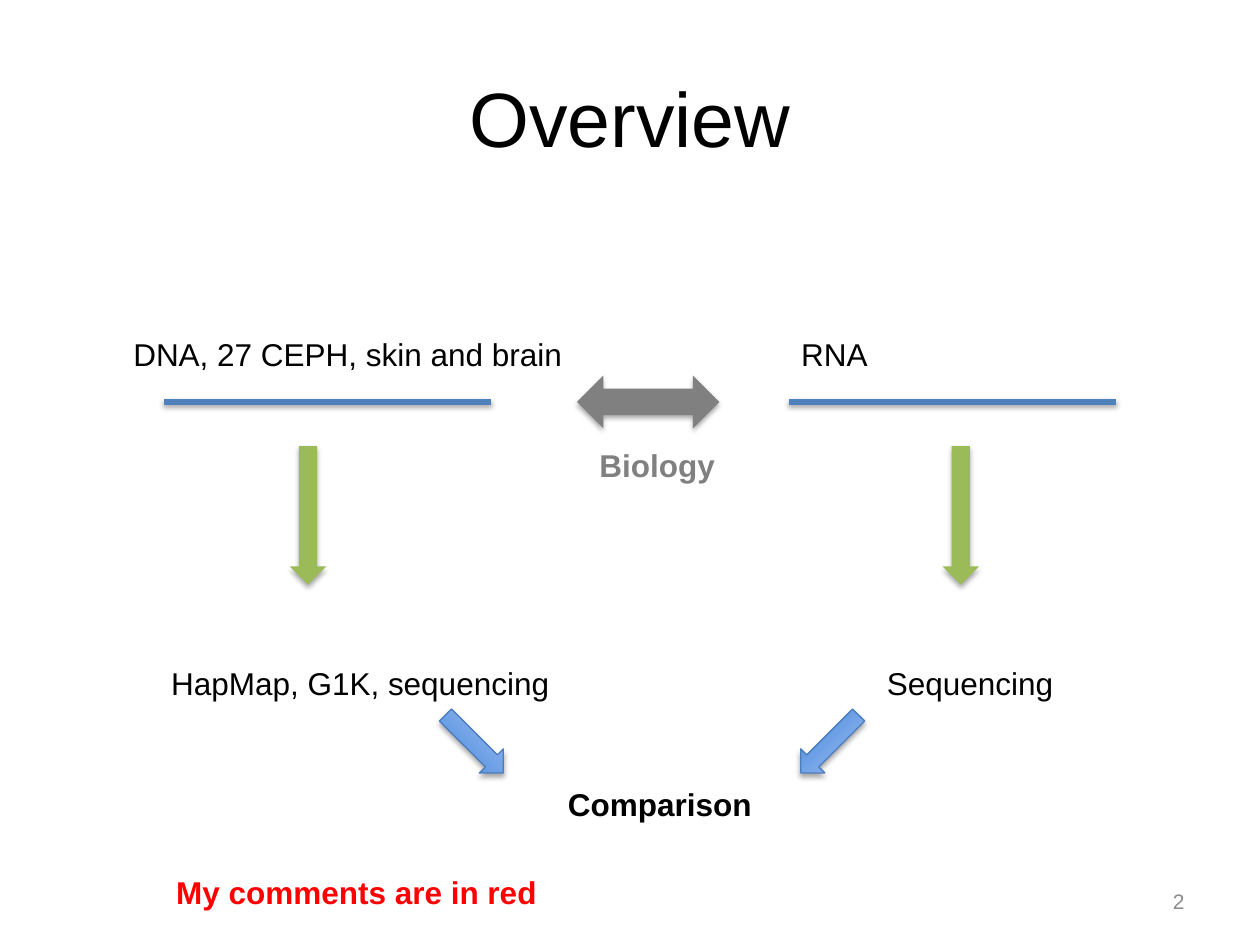
from lxml import etree
from pptx import Presentation
from pptx.dml.color import RGBColor
from pptx.enum.shapes import MSO_CONNECTOR, MSO_SHAPE
from pptx.enum.text import MSO_ANCHOR, MSO_AUTO_SIZE, PP_ALIGN
from pptx.oxml.ns import qn
from pptx.util import Inches, Pt

STRAIGHT = MSO_CONNECTOR.STRAIGHT
DOUBLE, DOWN, RIGHT_ARROW = (MSO_SHAPE.LEFT_RIGHT_ARROW, MSO_SHAPE.DOWN_ARROW,
                             MSO_SHAPE.RIGHT_ARROW)
LEFT, CENTER, RIGHT = PP_ALIGN.LEFT, PP_ALIGN.CENTER, PP_ALIGN.RIGHT
TOP, MIDDLE = MSO_ANCHOR.TOP, MSO_ANCHOR.MIDDLE

THEME = {
    "font": "Arial", "title": 44, "body": 18, "small": 12,
    "black": "000000", "gray": "808080", "number": "8C8C8C", "red": "FF0000",
    "strand": "4F81BD", "green": "9BBB59", "outline": "4B7EBC",
    "gradient": ("3F80CE", "A4C4FF"),
}

# Content: text, (left, top, width, height), format
TITLE = ("Overview", (0.5, 0.3, 9, 1.25),
         dict(size="title", align=CENTER, anchor=MIDDLE, wrap=True))
PAGE_NUMBER = ("2", (7.17, 6.95, 2.33, 0.4),
               dict(size="small", color="number", align=RIGHT, anchor=MIDDLE, wrap=True))
LABELS = [
    ("DNA, 27 CEPH, skin and brain", (0.96, 2.61, 3.64, 0.4), {}),
    ("RNA", (6.26, 2.61, 0.75, 0.4), {}),
    ("HapMap, G1K, sequencing", (1.26, 5.22, 3.23, 0.4), {}),
    ("Sequencing", (6.94, 5.22, 1.54, 0.4), {}),
    ("Biology", (4.66, 3.49, 1.14, 0.4), dict(color="gray", bold=True)),
    ("Comparison", (4.41, 6.18, 1.67, 0.4), dict(bold=True)),
    ("My comments are in red", (1.3, 6.88, 3.09, 0.4), dict(color="red", bold=True)),
]
STRAND_LEFTS, STRAND_TOP, STRAND_LENGTH = (1.3, 6.26), 3.19, 2.6
DOWN_LEFTS = (2.3, 7.48)
MERGE_ARROWS = ((3.44, 45), (6.26, 135))  # left, rotation


def rgb(name):
    return RGBColor.from_string(THEME.get(name, name))


def add_text(page, text, place, size="body", color="black", bold=False,
             align=LEFT, anchor=TOP, wrap=False):
    box = page.shapes.add_textbox(*map(Inches, place))
    frame = box.text_frame
    frame.word_wrap = wrap
    frame.auto_size = MSO_AUTO_SIZE.NONE if wrap else MSO_AUTO_SIZE.SHAPE_TO_FIT_TEXT
    frame.vertical_anchor = anchor
    para = frame.paragraphs[0]
    para.alignment = align
    span = para.add_run()
    span.text = text
    span.font.name, span.font.size = THEME["font"], Pt(THEME[size])
    span.font.bold, span.font.color.rgb = bold, rgb(color)


def add_shadow(shape, distance, opacity):
    """Soft black shadow straight below; call after fill and line are set."""
    effects = etree.SubElement(shape._element.spPr, qn("a:effectLst"))
    shadow = etree.SubElement(effects, qn("a:outerShdw"), blurRad=str(Pt(3.1)),
                              dist=str(Pt(distance)), dir="5400000", rotWithShape="0")
    black = etree.SubElement(shadow, qn("a:srgbClr"), val=THEME["black"])
    etree.SubElement(black, qn("a:alpha"), val=str(opacity * 1000))


def add_strand(page, left):
    strand = page.shapes.add_connector(
        STRAIGHT, *map(Inches, (left, STRAND_TOP, left + STRAND_LENGTH, STRAND_TOP)))
    strand.line.color.rgb, strand.line.width = rgb("strand"), Pt(3)
    add_shadow(strand, 1.6, 38)


def add_arrow(page, kind, place, color=None, rotation=0):
    """Plain arrow in a colour, or an outlined gradient arrow without one."""
    arrow = page.shapes.add_shape(kind, *map(Inches, place))
    arrow.rotation = rotation
    if color:
        arrow.fill.solid()
        arrow.fill.fore_color.rgb = rgb(color)
        arrow.line.fill.background()
    else:
        arrow.fill.gradient()
        arrow.fill.gradient_angle = 90
        for stop, shade, position in zip(arrow.fill.gradient_stops, THEME["gradient"], (0, 1)):
            stop.color.rgb, stop.position = rgb(shade), position
        arrow.line.color.rgb, arrow.line.width = rgb("outline"), Pt(0.75)
    add_shadow(arrow, 1.8, 35)


def main():
    deck = Presentation()
    deck.slide_width, deck.slide_height = Inches(10), Inches(7.5)
    page = deck.slides.add_slide(deck.slide_layouts[6])

    # Strands and the arrow between them
    for left in STRAND_LEFTS:
        add_strand(page, left)
    add_arrow(page, DOUBLE, (4.58, 2.98, 1.13, 0.42), "gray")

    # Arrows to the methods, then to the comparison
    for left in DOWN_LEFTS:
        add_arrow(page, DOWN, (left, 3.54, 0.29, 1.1), "green")
    for left, rotation in MERGE_ARROWS:
        add_arrow(page, RIGHT_ARROW, (left, 5.77, 0.65, 0.27), rotation=rotation)

    # Title, labels and page number
    for text, place, style in [TITLE, *LABELS, PAGE_NUMBER]:
        add_text(page, text, place, **style)

    deck.save("out.pptx")


if __name__ == "__main__":
    main()
